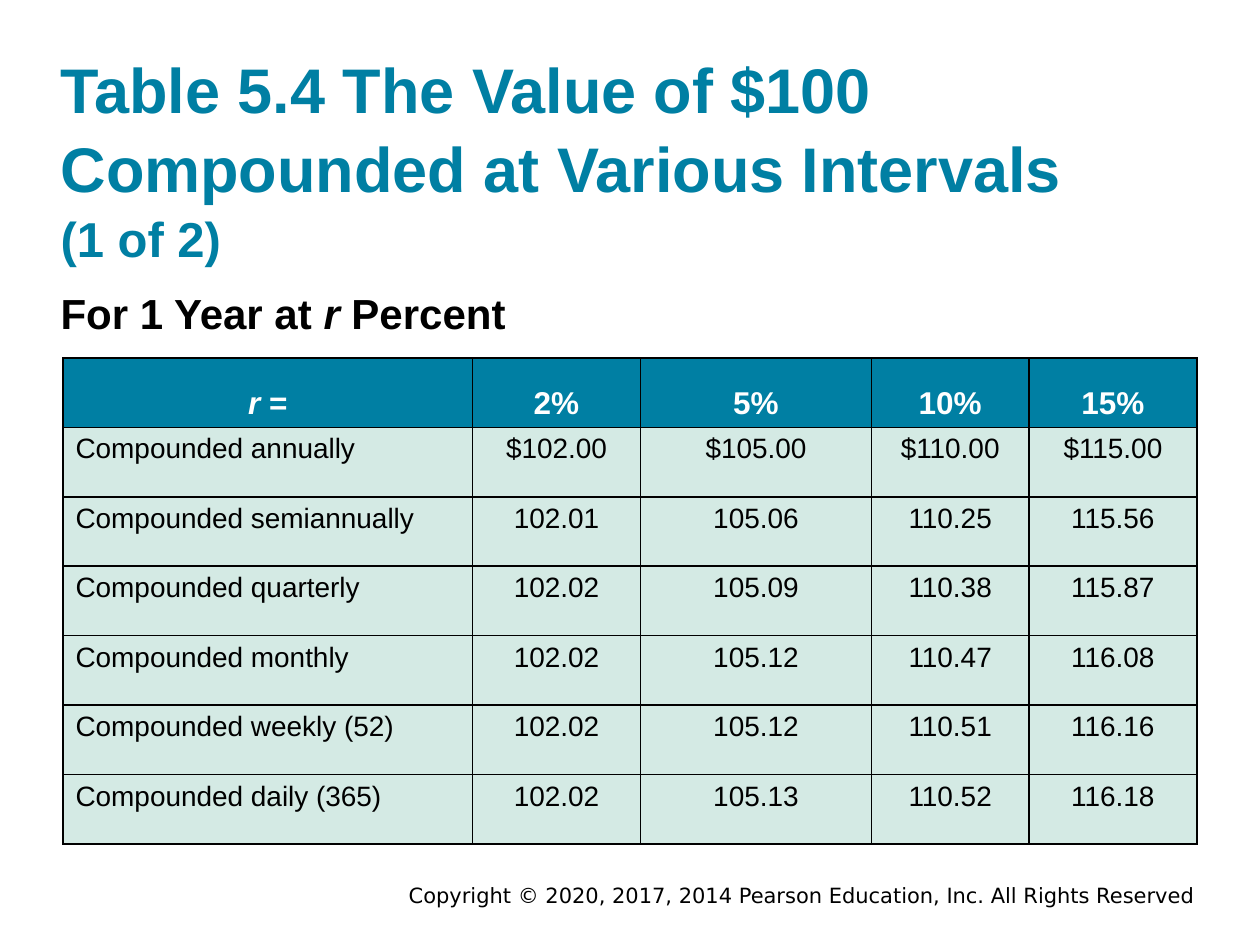
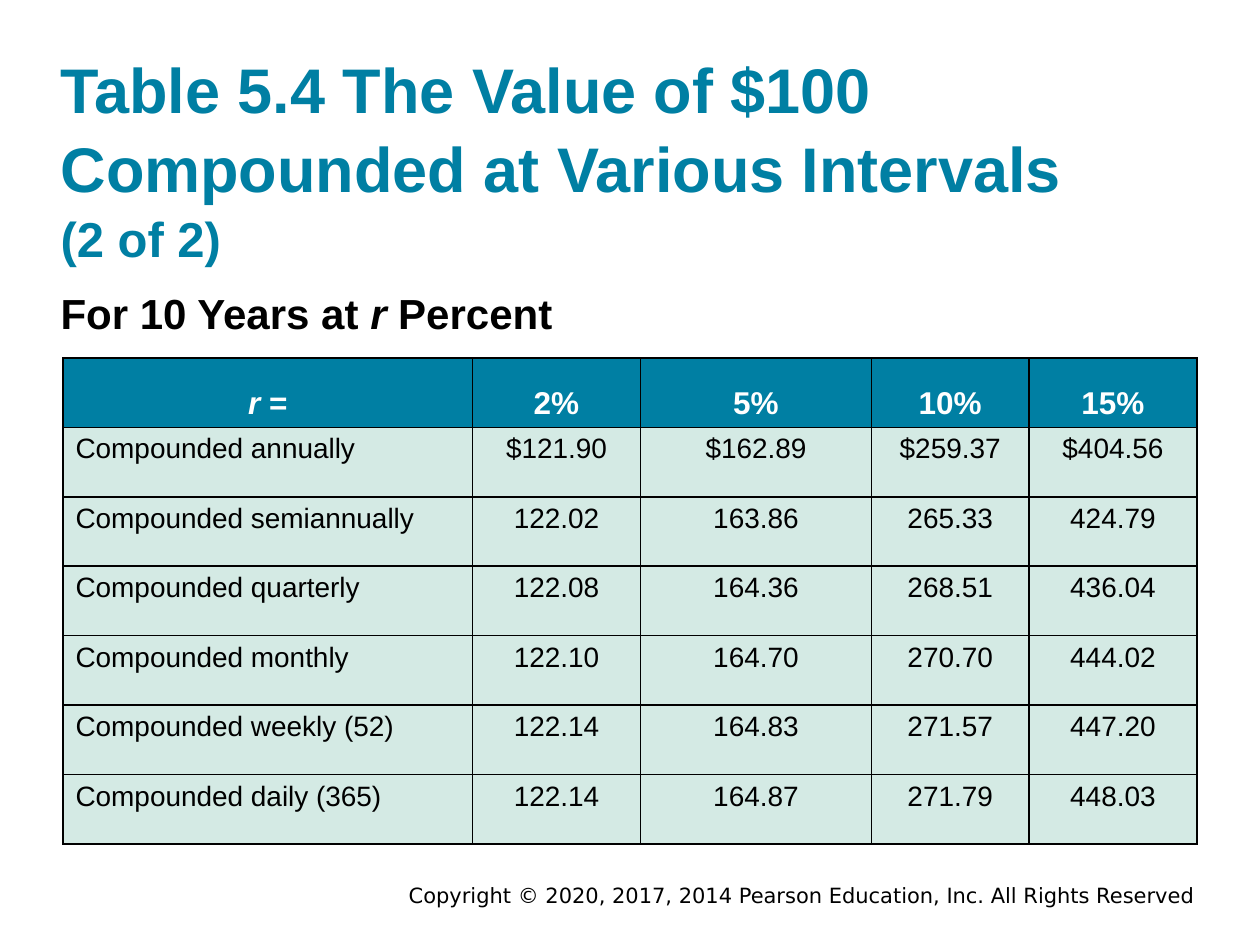
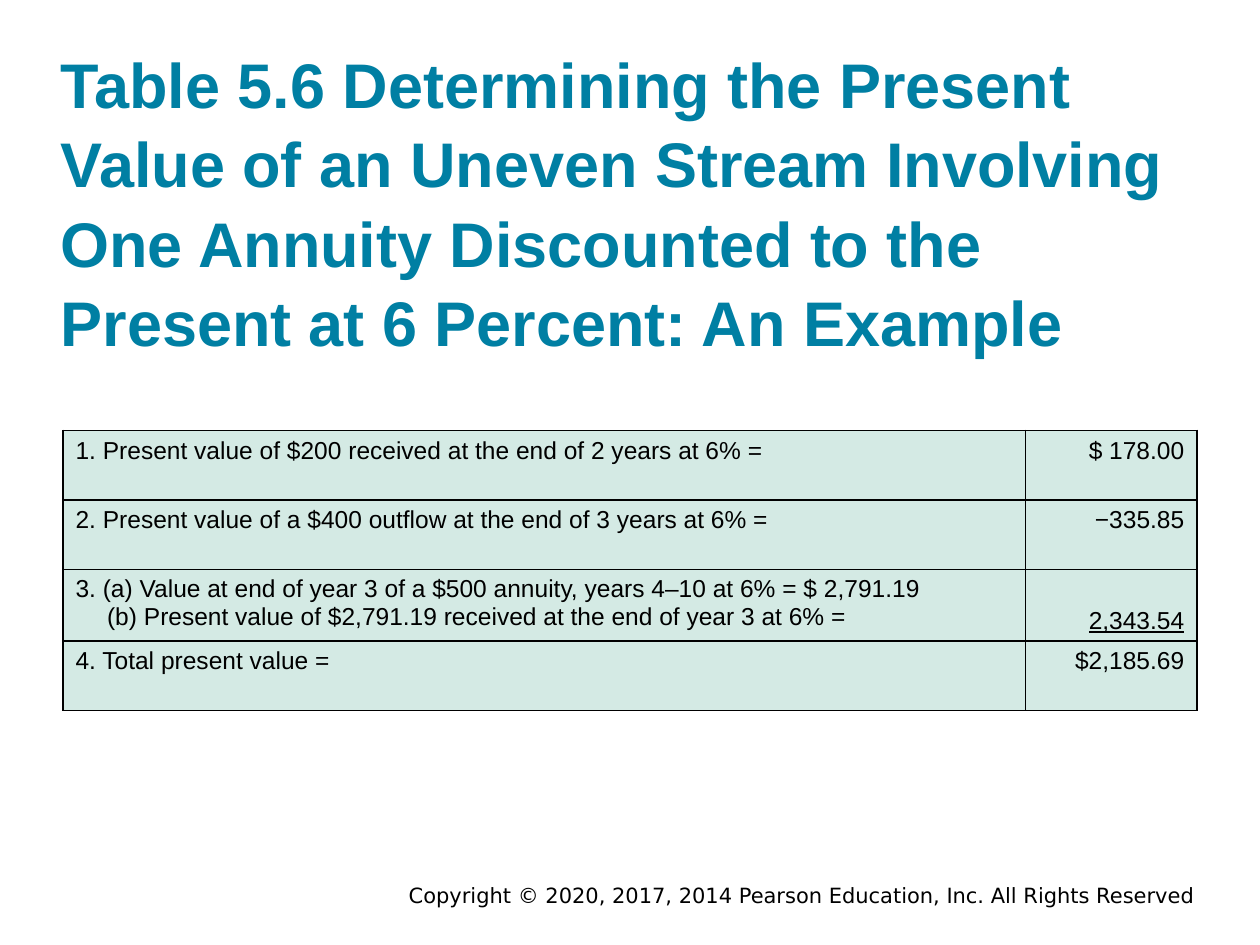
from pptx import Presentation
from pptx.dml.color import RGBColor
from pptx.enum.text import MSO_ANCHOR, MSO_AUTO_SIZE, PP_ALIGN
from pptx.oxml import parse_xml
from pptx.oxml.ns import nsdecls
from pptx.util import Pt

TEAL, MINT, BLACK, WHITE = "007FA3", "D4EAE4", "000000", "FFFFFF"
COPYRIGHT = "Copyright © 2020, 2017, 2014 Pearson Education, Inc. All Rights Reserved"
ROW_HEIGHT = 39.7
BORDER = (
    '<a:{side} {ns} w="12700"><a:solidFill><a:srgbClr val="{color}"/></a:solidFill></a:{side}>'
)


def add_text(p, text, size, color=BLACK, bold=False, font="Arial"):
    """Add text to a paragraph; parts between asterisks become italic runs."""
    for i, part in enumerate(text.split("*")):
        if part:
            r = p.add_run()
            r.text = part
            r.font.name = font
            r.font.size = Pt(size)
            r.font.bold = bold
            r.font.italic = i % 2 == 1
            r.font.color.rgb = RGBColor.from_string(color)


def add_grid(s, top, widths, rows, size, align, header=False):
    """Add a bordered table whose columns after the first use the given alignment."""
    table = s.shapes.add_table(
        len(rows), len(widths), Pt(36), Pt(top), Pt(sum(widths)), Pt(ROW_HEIGHT * len(rows))
    ).table
    table.first_row = table.horz_banding = False
    for column, width in zip(table.columns, widths):
        column.width = Pt(width)
    for i, row in enumerate(rows):
        table.rows[i].height = Pt(ROW_HEIGHT)
        is_header = header and i == 0
        for j, text in enumerate(row):
            cell = table.cell(i, j)
            for side in ("lnL", "lnR", "lnT", "lnB"):
                border = BORDER.format(side=side, ns=nsdecls("a"), color=BLACK)
                cell._tc.get_or_add_tcPr().append(parse_xml(border))
            cell.fill.solid()
            cell.fill.fore_color.rgb = RGBColor.from_string(TEAL if is_header else MINT)
            cell.vertical_anchor = MSO_ANCHOR.BOTTOM if is_header else MSO_ANCHOR.TOP
            for k, line in enumerate(text.split("\n")):
                p = cell.text_frame.add_paragraph() if k else cell.text_frame.paragraphs[0]
                p.alignment = PP_ALIGN.CENTER if is_header else align if j else PP_ALIGN.LEFT
                if is_header:
                    add_text(p, line, 18, WHITE, bold=True)
                else:
                    add_text(p, line, size)
    return table


prs = Presentation()
prs.slide_width, prs.slide_height = Pt(720), Pt(540)

# Titles and copyright line
COMPOUND_TITLE = "Table 5.4 The Value of $100 Compounded at Various Intervals"
ANNUITY_TITLE = (
    "Table 5.6 Determining the Present Value of an Uneven Stream Involving "
    "One Annuity Discounted to the Present at 6 Percent: An Example"
)
titles = [
    (COMPOUND_TITLE, "(1 of 2)", 31.7, 121),
    (COMPOUND_TITLE, "(2 of 2)", 31.7, 121),
    (ANNUITY_TITLE, "", 31, 174.2),
]
for title, part, top, height in titles:
    s = prs.slides.add_slide(prs.slide_layouts[5])
    sp = s.shapes.title
    sp.left, sp.top, sp.width, sp.height = Pt(34.6), Pt(top), Pt(648), Pt(height)
    tf = sp.text_frame
    tf.margin_left = tf.margin_top = tf.margin_right = tf.margin_bottom = 0
    tf.auto_size = MSO_AUTO_SIZE.NONE
    tf.vertical_anchor = MSO_ANCHOR.BOTTOM
    p = tf.paragraphs[0]
    p.alignment = PP_ALIGN.LEFT
    p.line_spacing = 1.05
    add_text(p, title, 36, TEAL, bold=True)
    if part:
        p.add_line_break()
        add_text(p, part, 28, TEAL, bold=True)

    tf = s.shapes.add_textbox(Pt(126), Pt(501), Pt(564), Pt(21.6)).text_frame
    tf.word_wrap = True
    tf.paragraphs[0].alignment = PP_ALIGN.RIGHT
    add_text(tf.paragraphs[0], COPYRIGHT, 12, font="DejaVu Sans")

# Slides 1 and 2: compound values
intervals = ["annually", "semiannually", "quarterly", "monthly", "weekly (52)", "daily (365)"]
compound_values = [
    ("For 1 Year at *r* Percent", [
        ("$102.00", "$105.00", "$110.00", "$115.00"),
        ("102.01", "105.06", "110.25", "115.56"),
        ("102.02", "105.09", "110.38", "115.87"),
        ("102.02", "105.12", "110.47", "116.08"),
        ("102.02", "105.12", "110.51", "116.16"),
        ("102.02", "105.13", "110.52", "116.18"),
    ]),
    ("For 10 Years at *r* Percent", [
        ("$121.90", "$162.89", "$259.37", "$404.56"),
        ("122.02", "163.86", "265.33", "424.79"),
        ("122.08", "164.36", "268.51", "436.04"),
        ("122.10", "164.70", "270.70", "444.02"),
        ("122.14", "164.83", "271.57", "447.20"),
        ("122.14", "164.87", "271.79", "448.03"),
    ]),
]
for s, (heading, values) in zip(prs.slides, compound_values):
    tf = s.shapes.add_textbox(Pt(34.6), Pt(162.7), Pt(302), Pt(29)).text_frame
    tf.margin_left = tf.margin_top = tf.margin_right = tf.margin_bottom = 0
    tf.word_wrap = True
    tf.paragraphs[0].line_spacing = 1.05
    add_text(tf.paragraphs[0], heading, 24, bold=True)
    rows = [("*r* =", "2%", "5%", "10%", "15%")]
    rows += [(f"Compounded {name}", *line) for name, line in zip(intervals, values)]
    add_grid(s, 204.5, [234, 96, 132, 90, 96], rows, 16, PP_ALIGN.CENTER, header=True)

# Slide 3: uneven stream
stream = [
    ("1. Present value of $200 received at the end of 2 years at 6% =", "$ 178.00"),
    ("2. Present value of a $400 outflow at the end of 3 years at 6% =", "−335.85"),
    ("3. (a) Value at end of year 3 of a $500 annuity, years 4–10 at 6% = $ 2,791.19\n"
     "(b) Present value of $2,791.19 received at the end of year 3 at 6% =", "2,343.54"),
    ("4. Total present value =", "$2,185.69"),
]
table = add_grid(prs.slides[2], 246, [550, 98], stream, 14, PP_ALIGN.RIGHT)
for p, indent in zip(table.cell(2, 0).text_frame.paragraphs, (-18, 0)):
    pPr = p._p.get_or_add_pPr()
    pPr.set("marL", str(Pt(18)))
    pPr.set("indent", str(Pt(indent)))
annuity_value = table.cell(2, 1)
annuity_value.vertical_anchor = MSO_ANCHOR.BOTTOM
annuity_value.text_frame.paragraphs[0].runs[0].font.underline = True

prs.save("out.pptx")
